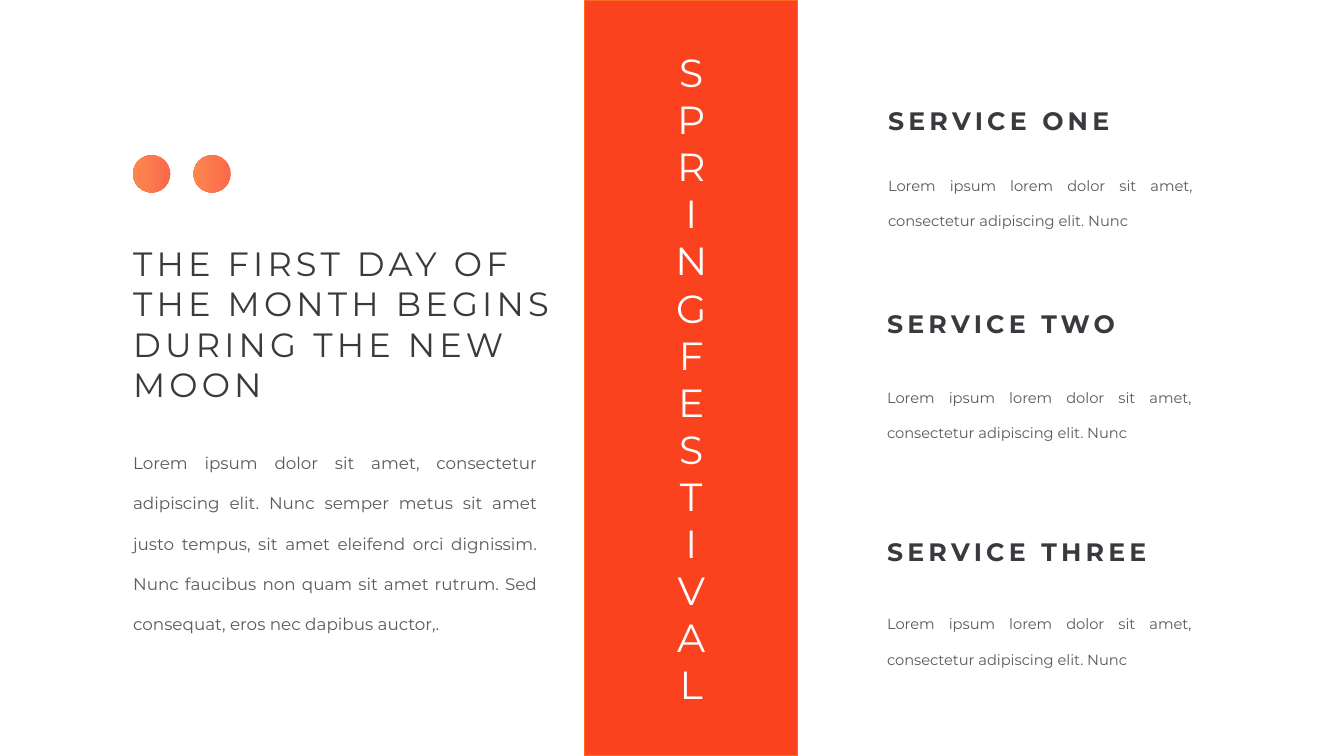
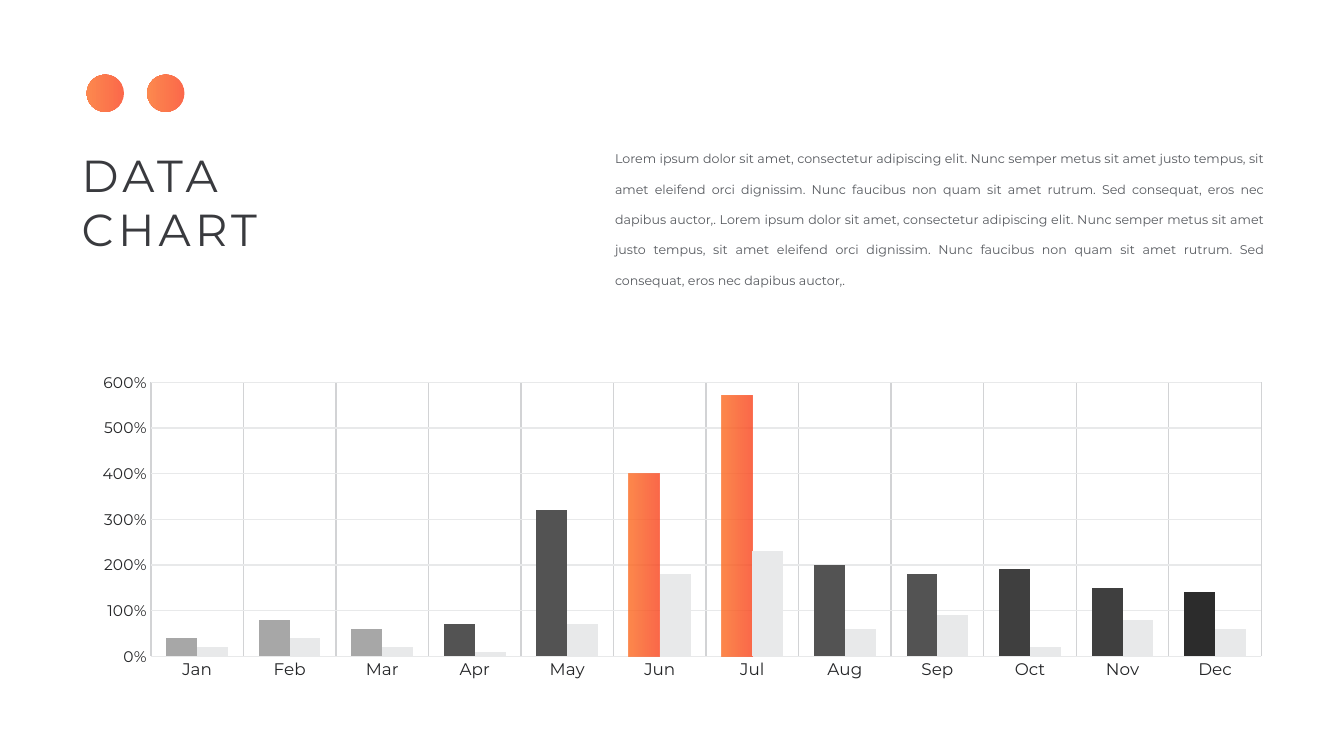
from lxml.etree import SubElement
from pptx import Presentation
from pptx.chart.data import CategoryChartData
from pptx.dml.color import RGBColor
from pptx.enum.chart import XL_CHART_TYPE, XL_TICK_MARK
from pptx.enum.shapes import MSO_SHAPE
from pptx.enum.text import MSO_ANCHOR, MSO_AUTO_SIZE, PP_ALIGN
from pptx.oxml.ns import qn
from pptx.util import Inches, Pt

# Shared style
FONT = "Montserrat"
RED = RGBColor(0xFA, 0x43, 0x1E)
ORANGE = RGBColor(0xFC, 0x6B, 0x22)
WHITE = RGBColor(0xFF, 0xFF, 0xFF)
HEADING = RGBColor(0x39, 0x3A, 0x3E)
BODY = RGBColor(0x58, 0x5B, 0x60)
CHART_TEXT = RGBColor(0x24, 0x25, 0x27)
GRID = RGBColor(0xD2, 0xD3, 0xD5)
PALE = RGBColor(0xE8, 0xE9, 0xEA)
LIGHT_GRAY = RGBColor(0xA7, 0xA7, 0xA7)
MID_GRAY = RGBColor(0x53, 0x53, 0x53)
DARK_GRAY = RGBColor(0x3F, 0x3F, 0x3F)
NEAR_BLACK = RGBColor(0x2C, 0x2C, 0x2C)

# Content
LOREM = (
    "Lorem ipsum dolor sit amet, consectetur adipiscing elit. Nunc semper metus "
    "sit amet justo tempus, sit amet eleifend orci dignissim. Nunc faucibus non "
    "quam sit amet rutrum. Sed consequat, eros nec dapibus auctor,."
)
SERVICE_TEXT = "Lorem ipsum lorem dolor sit amet, consectetur adipiscing elit. Nunc"
SERVICES = [  # name, left, heading top, text top
    ("SERVICE ONE", 8.71, 1, 1.53),
    ("SERVICE TWO", 8.7, 3.01, 3.63),
    ("SERVICE THREE", 8.7, 5.27, 5.88),
]
MONTHS = ["Jan", "Feb", "Mar", "Apr", "May", "Jun",
          "Jul", "Aug", "Sep", "Oct", "Nov", "Dec"]
FIRST_SERIES = [40, 80, 60, 70, 320, 400, 570, 200, 180, 190, 150, 140]
SECOND_SERIES = [20, 40, 20, 10, 70, 180, 230, 60, 90, 20, 80, 60]
# None marks the highlighted months, which take the gradient
MONTH_COLORS = ([LIGHT_GRAY] * 3 + [MID_GRAY] * 2 + [None] * 2
                + [MID_GRAY] * 2 + [DARK_GRAY] * 2 + [NEAR_BLACK])


def place(shape, left, top, width, height):
    shape.left, shape.top = Inches(left), Inches(top)
    shape.width, shape.height = Inches(width), Inches(height)


def write(shape, text, size, color, align=PP_ALIGN.LEFT, spacing=1.0,
          tracking=0, bold=False, anchor=MSO_ANCHOR.TOP):
    """Set the text of a shape and format every paragraph alike."""
    frame = shape.text_frame
    frame.text = text
    frame.word_wrap = True
    frame.auto_size = MSO_AUTO_SIZE.NONE
    frame.vertical_anchor = anchor
    for paragraph in frame.paragraphs:
        paragraph.alignment = align
        paragraph.line_spacing = spacing
        paragraph.space_before = Pt(0)
        for run in paragraph.runs:
            font = run.font
            font.name, font.size, font.bold = FONT, Pt(size), bold
            font.color.rgb = color
            if tracking:
                font._element.set("spc", str(tracking * 100))


def add_title(slide, text, size, box):
    place(slide.shapes.title, *box)
    write(slide.shapes.title, text, size, HEADING, tracking=3)


def write_body(shape, text, size):
    write(shape, text, size, BODY, align=PP_ALIGN.JUSTIFY, spacing=2.0)


def add_body(slide, text, size, box):
    body = slide.placeholders[1]
    place(body, *box)
    write_body(body, text, size)
    for paragraph in body.text_frame.paragraphs:
        properties = paragraph._p.get_or_add_pPr()
        properties.set("marL", "0")
        properties.set("indent", "0")
        SubElement(properties, qn("a:buNone"))


def add_service(slide, name, left, heading_top, text_top):
    heading = slide.shapes.add_textbox(
        Inches(left), Inches(heading_top), Inches(3.22), Inches(0.4))
    write(heading, name, 18, HEADING, tracking=3, bold=True)
    detail = slide.shapes.add_textbox(
        Inches(left), Inches(text_top), Inches(3.22), Inches(0.76))
    write_body(detail, SERVICE_TEXT, 10.5)


def set_gradient(fill, end=1.0):
    fill.gradient()
    fill.gradient_angle = 180
    for stop, color, position in zip(fill.gradient_stops, (RED, ORANGE), (0, end)):
        stop.color.rgb = color
        stop.position = position


def soften_gradients(element):
    """Make all gradient stops below an element 80% opaque."""
    for gradient in element.iter(qn("a:gradFill")):
        for color in gradient.iter(qn("a:srgbClr")):
            SubElement(color, qn("a:alpha"), val="80000")


def add_dots(slide, left, top):
    for step in range(2):
        dot = slide.shapes.add_shape(
            MSO_SHAPE.OVAL, Inches(left + 0.6 * step), Inches(top),
            Inches(0.37), Inches(0.37))
        dot.shadow.inherit = False
        dot.line.fill.background()
        set_gradient(dot.fill)
        soften_gradients(dot.element)


def add_band(slide, word):
    """Full-height band with a word set one letter per line."""
    band = slide.shapes.add_shape(
        MSO_SHAPE.RECTANGLE, Inches(5.8), 0, Inches(2.11), Inches(7.5))
    band.shadow.inherit = False
    band.fill.solid()
    band.fill.fore_color.rgb = RED
    band.line.color.rgb = ORANGE
    band.line.width = Pt(1)
    write(band, "\n".join(word), 28, WHITE, align=PP_ALIGN.CENTER,
          tracking=6, anchor=MSO_ANCHOR.MIDDLE)


def set_plot_area(chart, **fractions):
    plot_area = chart.element.find(".//" + qn("c:plotArea"))
    for old in plot_area.findall(qn("c:layout")):
        plot_area.remove(old)
    layout = plot_area.makeelement(qn("c:layout"))
    plot_area.insert(0, layout)
    manual = SubElement(layout, qn("c:manualLayout"))
    settings = {"layoutTarget": "inner", "xMode": "edge", "yMode": "edge", **fractions}
    for name, value in settings.items():
        SubElement(manual, qn("c:" + name), val=str(value))


def style_axis(axis, size, grid_color):
    axis.has_major_gridlines = True
    grid_line = axis.major_gridlines.format.line
    grid_line.color.rgb = grid_color
    grid_line.width = Pt(1)
    axis.major_tick_mark = axis.minor_tick_mark = XL_TICK_MARK.NONE
    axis.format.line.fill.background()
    font = axis.tick_labels.font
    font.name, font.size = FONT, Pt(size)
    font.color.rgb = CHART_TEXT


def add_month_chart(slide):
    data = CategoryChartData()
    data.categories = MONTHS
    data.add_series("Series 1", FIRST_SERIES)
    data.add_series("Series 2", SECOND_SERIES)
    chart = slide.shapes.add_chart(
        XL_CHART_TYPE.COLUMN_CLUSTERED, Inches(0.71), Inches(3.34),
        Inches(11.92), Inches(3.62), data).chart
    chart.has_legend = chart.has_title = False
    chart.font.name, chart.font.size = FONT, Pt(12)
    set_plot_area(chart, x=0.066, y=0.125, w=0.924, h=0.751)

    # Axes
    style_axis(chart.category_axis, 12, GRID)
    percent_axis = chart.value_axis
    style_axis(percent_axis, 11, PALE)
    percent_axis.minimum_scale, percent_axis.maximum_scale = 0, 600
    percent_axis.major_unit = 100
    percent_axis.tick_labels.number_format = '0"%"'
    percent_axis.tick_labels.number_format_is_linked = False

    # Columns
    plot = chart.plots[0]
    plot.gap_width, plot.overlap = 100, 0
    plot.vary_by_categories = False
    for series, color in zip(plot.series, (NEAR_BLACK, PALE)):
        series.format.fill.solid()
        series.format.fill.fore_color.rgb = color
    for month, color in enumerate(MONTH_COLORS):
        fill = plot.series[0].points[month].format.fill
        if color is None:
            set_gradient(fill, end=0.98)
        else:
            fill.solid()
            fill.fore_color.rgb = color
    soften_gradients(chart.element)


def build_services_slide(slide):
    add_title(slide, "THE FIRST DAY OF THE MONTH BEGINS DURING THE NEW MOON",
              24, (1.22, 2.36, 4.44, 1.72))
    add_body(slide, LOREM, 12, (1.22, 4.24, 4.21, 2.06))
    add_dots(slide, 1.32, 1.54)
    add_band(slide, "SPRINGFESTIVAL")
    for service in SERVICES:
        add_service(slide, *service)


def build_chart_slide(slide):
    add_title(slide, "DATA\nCHART", 32, (0.71, 1.42, 4.62, 1.18))
    add_body(slide, f"{LOREM} {LOREM}", 9, (6, 1.3, 6.63, 1.57))
    add_dots(slide, 0.86, 0.74)
    add_month_chart(slide)


def main():
    deck = Presentation()
    deck.slide_width, deck.slide_height = Inches(13.33), Inches(7.5)
    title_and_content = deck.slide_layouts[1]
    for build in (build_services_slide, build_chart_slide):
        build(deck.slides.add_slide(title_and_content))
    deck.save("out.pptx")


if __name__ == "__main__":
    main()
